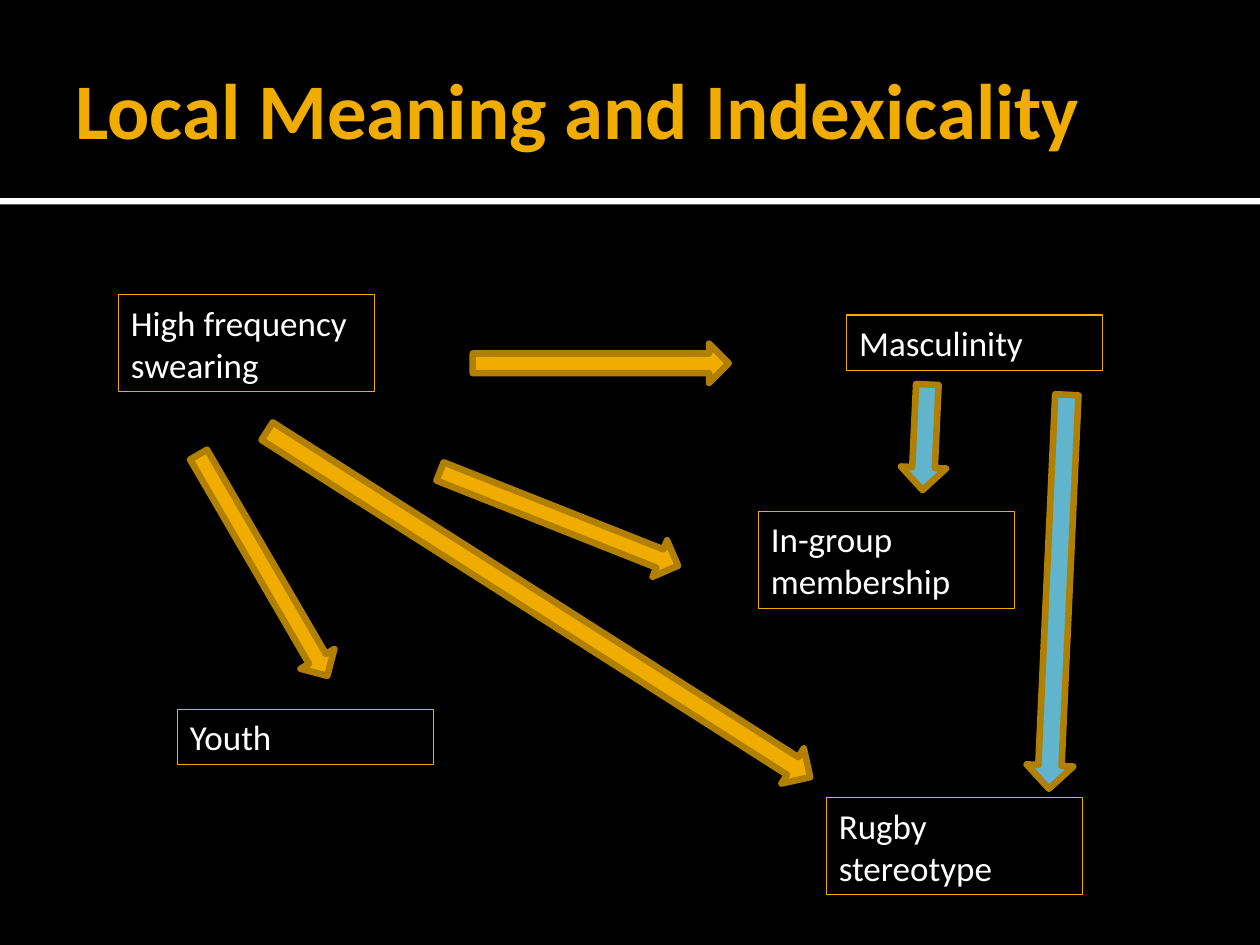
import pptx
import pptx.dml.color
import pptx.enum.shapes
import pptx.enum.text
import pptx.util
from pptx.util import Cm

SHAPES = pptx.enum.shapes.MSO_SHAPE
ANCHORS = pptx.enum.text.MSO_ANCHOR
BLACK, WHITE, GOLD, DARK_GOLD, BLUE = "000000", "FFFFFF", "F0AD00", "B28000", "60B5CC"


def color(value):
    """Return the colour for a hex string."""
    return pptx.dml.color.RGBColor.from_string(value)


def write_text(shape, text, size=20, fill=WHITE, bold=False, anchor=ANCHORS.TOP, right_inset=0.25):
    """Write one left-aligned, wrapped paragraph into a shape."""
    frame = shape.text_frame
    frame.word_wrap = True
    frame.vertical_anchor = anchor
    frame.margin_left, frame.margin_right = Cm(0.25), Cm(right_inset)
    frame.margin_top = frame.margin_bottom = Cm(0.13)
    paragraph = frame.paragraphs[0]
    paragraph.alignment = pptx.enum.text.PP_ALIGN.LEFT
    run = paragraph.add_run()
    run.text = text
    run.font.name = "Calibri"
    run.font.size = pptx.util.Pt(size)
    run.font.bold = bold
    run.font.color.rgb = color(fill)


def add_block(slide, kind, left, top, width, height, fill=None, line=None, line_width=0.75):
    """Add a preset shape with an optional fill and outline."""
    shape = slide.shapes.add_shape(kind, Cm(left), Cm(top), Cm(width), Cm(height))
    shape.shadow.inherit = False
    if fill:
        shape.fill.solid()
        shape.fill.fore_color.rgb = color(fill)
    else:
        shape.fill.background()
    if line:
        shape.line.color.rgb = color(line)
        shape.line.width = pptx.util.Pt(line_width)
    else:
        shape.line.fill.background()
    return shape


def add_header(slide, left, top, width, height):
    """Draw the title band with the rule along its lower edge."""
    add_block(slide, SHAPES.RECTANGLE, left, top + height, width, 0.13, fill=WHITE)
    add_block(slide, SHAPES.RECTANGLE, left, top, width, height, fill=BLACK)
    title = slide.shapes.add_textbox(Cm(left + 1.27), Cm(top + 0.43), Cm(width - 2.54), Cm(height - 0.51))
    write_text(title, "Local Meaning and Indexicality", size=45, fill=GOLD, bold=True,
               anchor=ANCHORS.MIDDLE, right_inset=0.13)


def add_diagram(slide, left, top):
    """Draw the labelled meanings and the arrows between them."""
    one_line, two_lines = 1.12, 1.96
    labels = [
        ("High frequency swearing", 0, 0, two_lines),
        ("Masculinity", 14.68, 0.41, one_line),
        ("Youth", 1.19, 8.36, one_line),
        ("In-group membership", 12.9, 4.37, two_lines),
        ("Rugby stereotype", 14.27, 10.14, two_lines),
    ]
    arrows = [
        (7.14, 0.99, 5.16, 0.79, 0, GOLD),
        (6.3, 4.12, 5.16, 0.79, 21.6, GOLD),
        (0.33, 5.06, 5.16, 0.79, 59.8, GOLD),
        (14.96, 5.52, 7.95, 0.94, 92.6, BLUE),
        (1.98, 5.82, 12.98, 0.84, 32.5, GOLD),
        (15.19, 2.42, 2.13, 0.91, 92.6, BLUE),
    ]
    for text, x, y, height in labels:
        label = add_block(slide, SHAPES.RECTANGLE, left + x, top + y, 5.16, height, line=GOLD)
        write_text(label, text)
    for x, y, width, height, rotation, fill in arrows:
        arrow = add_block(slide, SHAPES.RIGHT_ARROW, left + x, top + y, width, height,
                          fill=fill, line=DARK_GOLD, line_width=3.78)
        arrow.rotation = rotation


def main():
    """Build and save the presentation."""
    presentation = pptx.Presentation()
    presentation.slide_width, presentation.slide_height = Cm(25.4), Cm(19.05)
    slide = presentation.slides.add_slide(presentation.slide_layouts[6])
    slide.background.fill.solid()
    slide.background.fill.fore_color.rgb = color(BLACK)
    add_header(slide, 0, 0, 25.4, 3.99)
    add_diagram(slide, 2.39, 5.94)
    presentation.save("out.pptx")


if __name__ == "__main__":
    main()
